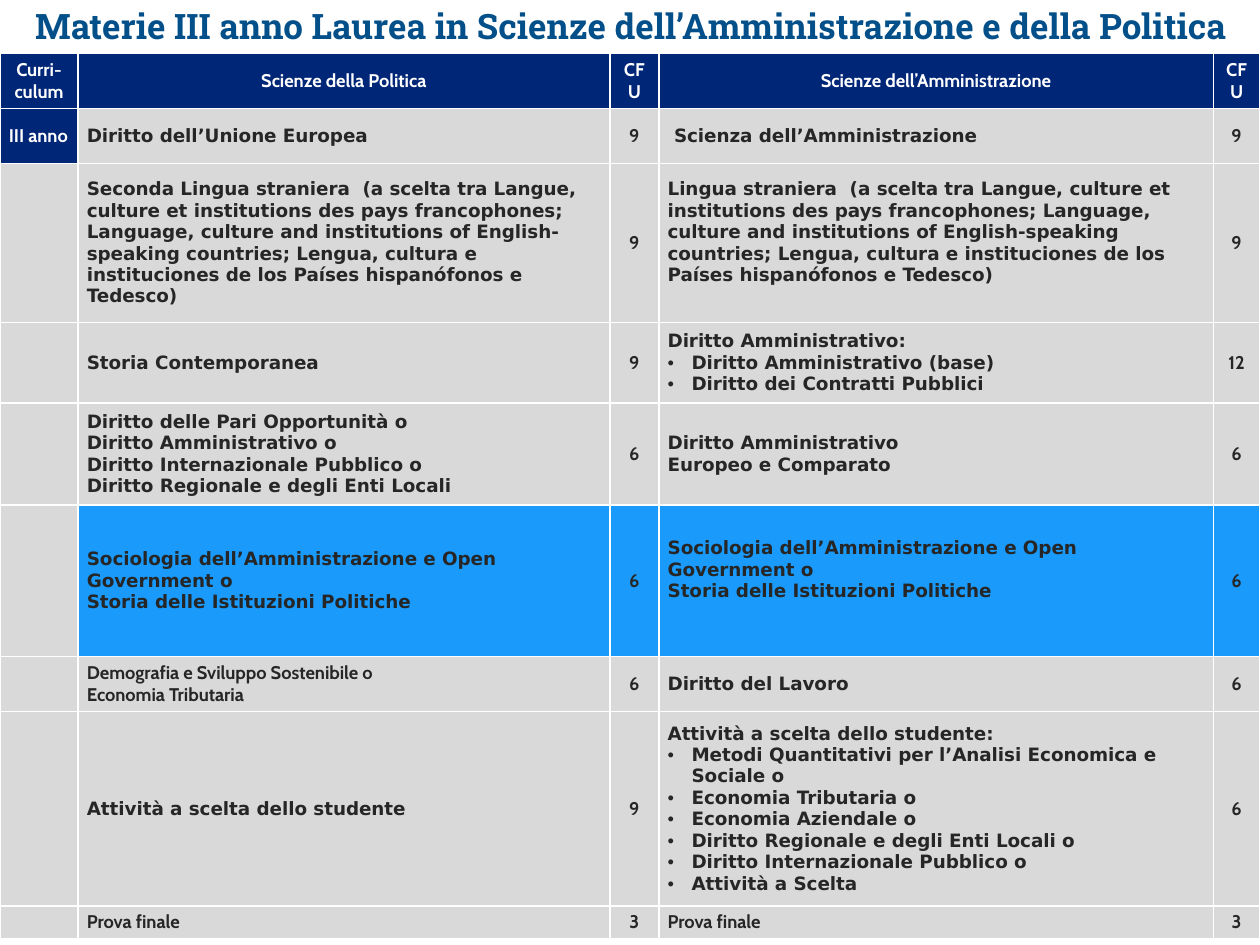
"""Build the slide with the third-year course table of the two curricula."""
from lxml.etree import SubElement
from pptx import Presentation
from pptx.dml.color import RGBColor
from pptx.enum.text import MSO_ANCHOR as Anchor, PP_ALIGN as Align
from pptx.oxml.ns import qn
from pptx.util import Inches, Pt

NAVY = RGBColor(0x00, 0x26, 0x77)
TITLE_BLUE = RGBColor(0x02, 0x4F, 0x89)
BRIGHT_BLUE = RGBColor(0x1A, 0x9B, 0xFC)
GREY = RGBColor(0xD9, 0xD9, 0xD9)
INK = RGBColor(0x26, 0x26, 0x26)
WHITE = RGBColor(0xFF, 0xFF, 0xFF)

LANGUAGES = (
    "Lingua straniera  (a scelta tra Langue, culture et institutions des pays francophones; "
    "Language, culture and institutions of English-speaking countries; Lengua, cultura e "
    "instituciones de los Países hispanófonos e Tedesco)"
)
SOCIOLOGY = (
    "Sociologia dell’Amministrazione e Open Government o\n"
    "Storia delle Istituzioni Politiche"
)
DEMOGRAPHY = "Demografia e Sviluppo Sostenibile o\nEconomia Tributaria"
FINAL_EXAM = "Prova finale"

COLUMN_WIDTHS = [0.62, 4.22, 0.39, 4.4, 0.37]
ROW_HEIGHTS = [0.44, 0.44, 1.26, 0.64, 0.81, 1.2, 0.44, 1.54, 0.26]
COURSES = [
    ["Curri-\nculum", "Scienze della Politica", "CFU", "Scienze dell’Amministrazione", "CFU"],
    ["III anno", "Diritto dell’Unione Europea", "9", " Scienza dell’Amministrazione", "9"],
    ["", "Seconda " + LANGUAGES, "9", LANGUAGES, "9"],
    ["", "Storia Contemporanea", "9",
     "Diritto Amministrativo:\n•Diritto Amministrativo (base)\n•Diritto dei Contratti Pubblici",
     "12"],
    ["", "Diritto delle Pari Opportunità o\nDiritto Amministrativo o\n"
     "Diritto Internazionale Pubblico o\nDiritto Regionale e degli Enti Locali", "6",
     "Diritto Amministrativo\nEuropeo e Comparato", "6"],
    ["", SOCIOLOGY, "6", SOCIOLOGY, "6"],
    ["", DEMOGRAPHY, "6", "Diritto del Lavoro", "6"],
    ["", "Attività a scelta dello studente", "9",
     "Attività a scelta dello studente:\n"
     "•Metodi Quantitativi per l’Analisi Economica e Sociale o\n•Economia Tributaria o\n"
     "•Economia Aziendale o\n•Diritto Regionale e degli Enti Locali o\n"
     "•Diritto Internazionale Pubblico o\n•Attività a Scelta", "6"],
    ["", FINAL_EXAM, "3", FINAL_EXAM, "3"],
]
HIGHLIGHT_ROW = 5
RAISED_CELLS = {(2, 3), (HIGHLIGHT_ROW, 3)}
TEXT_SIZE = Pt(10.5)


def add_borders(cell):
    properties = cell._tc.get_or_add_tcPr()
    for side in ("lnL", "lnR", "lnT", "lnB"):
        line = SubElement(properties, qn(f"a:{side}"), w=str(Pt(1)))
        SubElement(SubElement(line, qn("a:solidFill")), qn("a:srgbClr"), val=str(WHITE))


def add_bullet(paragraph):
    properties = paragraph._p.get_or_add_pPr()
    properties.set("marL", str(Inches(0.19)))
    properties.set("indent", str(-Inches(0.19)))
    SubElement(properties, qn("a:buFont"), typeface="Arial")
    SubElement(properties, qn("a:buChar"), char="•")


deck = Presentation()
deck.slide_width, deck.slide_height = Inches(10), Inches(7.5)
slide = deck.slides.add_slide(deck.slide_layouts[6])

heading = slide.shapes.add_textbox(Inches(0.11), Inches(0.03), Inches(9.8), Inches(0.39)).text_frame
heading.word_wrap = True
heading.vertical_anchor = Anchor.MIDDLE
heading.margin_left = heading.margin_right = heading.margin_top = heading.margin_bottom = 0
title = heading.paragraphs[0]
title.text = "Materie III anno Laurea in Scienze dell’Amministrazione e della Politica"
title.alignment = Align.CENTER
title.line_spacing = 0.9
title.font.name, title.font.size, title.font.bold = "Roboto Slab", Pt(20), True
title.font.color.rgb = TITLE_BLUE

plan = slide.shapes.add_table(
    len(ROW_HEIGHTS), len(COLUMN_WIDTHS), 0, Inches(0.42),
    deck.slide_width, Inches(sum(ROW_HEIGHTS)),
).table
plan.horz_banding = False
for column, width in zip(plan.columns, COLUMN_WIDTHS):
    column.width = Inches(width)

for r, (height, entries) in enumerate(zip(ROW_HEIGHTS, COURSES)):
    plan.rows[r].height = Inches(height)
    for c, entry in enumerate(entries):
        cell = plan.cell(r, c)
        is_heading = r == 0 or (r, c) == (1, 0)
        is_course = not is_heading and c in (1, 3) and entry not in (DEMOGRAPHY, FINAL_EXAM)
        add_borders(cell)
        cell.fill.solid()
        if is_heading:
            cell.fill.fore_color.rgb = NAVY
        else:
            cell.fill.fore_color.rgb = BRIGHT_BLUE if r == HIGHLIGHT_ROW and c else GREY
        cell.vertical_anchor = Anchor.MIDDLE
        cell.margin_left = cell.margin_right = Inches(0.07)
        cell.margin_top = Inches(0.04)
        cell.margin_bottom = Inches(0.21 if (r, c) in RAISED_CELLS else 0.04)
        cell.text = entry.replace("•", "")
        for paragraph, wording in zip(cell.text_frame.paragraphs, entry.split("\n")):
            if wording.startswith("•"):
                add_bullet(paragraph)
            paragraph.alignment = Align.CENTER if r == 0 or c in (2, 4) else Align.LEFT
            paragraph.font.name = "DejaVu Sans" if is_course else "Cabin"
            paragraph.font.size, paragraph.font.bold = TEXT_SIZE, True
            paragraph.font.color.rgb = WHITE if is_heading else INK
            if not wording:
                SubElement(paragraph._p, qn("a:endParaRPr"), sz=str(int(TEXT_SIZE.pt * 100)))

deck.save("out.pptx")
